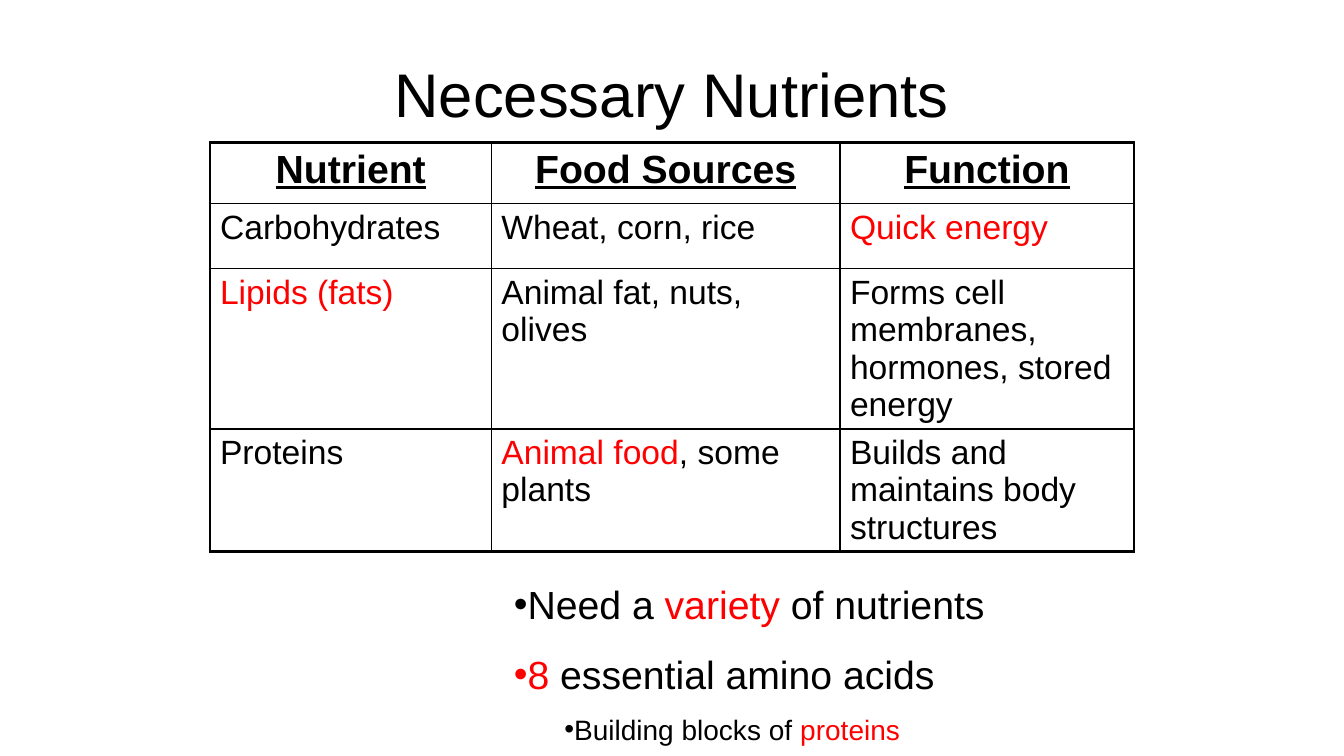
from lxml.etree import SubElement
from pptx import Presentation
from pptx.dml.color import RGBColor
from pptx.enum.text import MSO_ANCHOR, MSO_AUTO_SIZE, PP_ALIGN
from pptx.oxml import parse_xml
from pptx.oxml.ns import nsdecls, qn
from pptx.util import Pt

ROWS = [
    ["Nutrient", "Food Sources", "Function"],
    ["Carbohydrates", "Wheat, corn, rice", "|Quick energy|"],
    ["|Lipids (fats)|", "Animal fat, nuts, olives",
     "Forms cell membranes, hormones, stored energy"],
    ["Proteins", "|Animal food|, some plants",
     "Builds and maintains body structures"],
]
COLUMN_WIDTHS = [201, 249, 210]
ROW_HEIGHTS = [43.5, 46.5, 114.5, 87.5]
NOTES = [  # text, size, level, space before
    ("Need a |variety| of nutrients", 28, 0, 0),
    ("|8| essential amino acids", 28, 0, 16.5),
    ("Building blocks of |proteins|", 20, 1, 10.5),
]


def colour(value):
    return RGBColor.from_string(value)


class NutrientSlide:
    font = "Arial"
    ink = "000000"
    accent = "FF0000"
    thin, thick = 1, 2.25

    def __init__(self, deck):
        self.page = deck.slides.add_slide(deck.slide_layouts[5])

    def add_text(self, para, text, size, bold=False, underline=False,
                 align=PP_ALIGN.LEFT, before=0):
        """Fill a paragraph; pieces between bars take the accent colour."""
        para.alignment = align
        para.space_before = Pt(before)
        for index, piece in enumerate(text.split("|")):
            if not piece:
                continue
            span = para.add_run()
            span.text = piece
            span.font.name = self.font
            span.font.size = Pt(size)
            span.font.bold = bold
            span.font.underline = underline
            span.font.color.rgb = colour(self.accent if index % 2 else self.ink)

    def title(self, text, left, top, width, height):
        box = self.page.shapes.title
        box.left, box.top, box.width, box.height = map(Pt, (left, top, width, height))
        box.text_frame.vertical_anchor = MSO_ANCHOR.MIDDLE
        self.add_text(box.text_frame.paragraphs[0], text, 44, align=PP_ALIGN.CENTER)

    def borders(self, cell, widths):
        """Draw the cell's left, right, top and bottom lines."""
        properties = cell._tc.get_or_add_tcPr()
        for index, (side, width) in enumerate(zip("LRTB", widths)):
            properties.insert(index, parse_xml(
                f'<a:ln{side} {nsdecls("a")} w="{Pt(width)}"><a:solidFill>'
                f'<a:srgbClr val="{self.ink}"/></a:solidFill></a:ln{side}>'))

    def table(self, rows, left, top, widths, heights):
        table = self.page.shapes.add_table(
            len(rows), len(widths), Pt(left), Pt(top),
            Pt(sum(widths)), Pt(sum(heights))).table
        table.first_row = table.horz_banding = False
        for column, width in zip(table.columns, widths):
            column.width = Pt(width)
        for row, height in zip(table.rows, heights):
            row.height = Pt(height)
        last_row, last_column = len(rows) - 1, len(widths) - 1
        for r, texts in enumerate(rows):
            if r == 0:
                style = dict(size=28, bold=True, underline=True, align=PP_ALIGN.CENTER)
            else:
                style = dict(size=24)
            for c, text in enumerate(texts):
                cell = table.cell(r, c)
                cell.fill.background()
                outer = (c == 0, c == last_column, r == 0, r == last_row)
                self.borders(cell, [self.thick if edge else self.thin for edge in outer])
                self.add_text(cell.text_frame.paragraphs[0], text, **style)

    def bullets(self, items, left, top, width, height):
        box = self.page.shapes.add_textbox(Pt(left), Pt(top), Pt(width), Pt(height))
        frame = box.text_frame
        frame.word_wrap = True
        frame.auto_size = MSO_AUTO_SIZE.SHAPE_TO_FIT_TEXT
        for index, (text, size, level, before) in enumerate(items):
            para = frame.add_paragraph() if index else frame.paragraphs[0]
            para.level = level
            properties = para._p.get_or_add_pPr()
            properties.set("marL", str(Pt(36 * level)))
            properties.set("indent", "0")
            SubElement(properties, qn("a:buFont"), typeface=self.font)
            SubElement(properties, qn("a:buChar"), char="•")
            self.add_text(para, text, size, before=before)


def main():
    deck = Presentation()
    deck.slide_width, deck.slide_height = Pt(960), Pt(540)
    slide = NutrientSlide(deck)
    slide.title("Necessary Nutrients", 48, 21.6, 864, 90)
    slide.table(ROWS, 150, 102, COLUMN_WIDTHS, ROW_HEIGHTS)
    slide.bullets(NOTES, 360, 411, 480, 125)
    deck.save("out.pptx")


if __name__ == "__main__":
    main()
